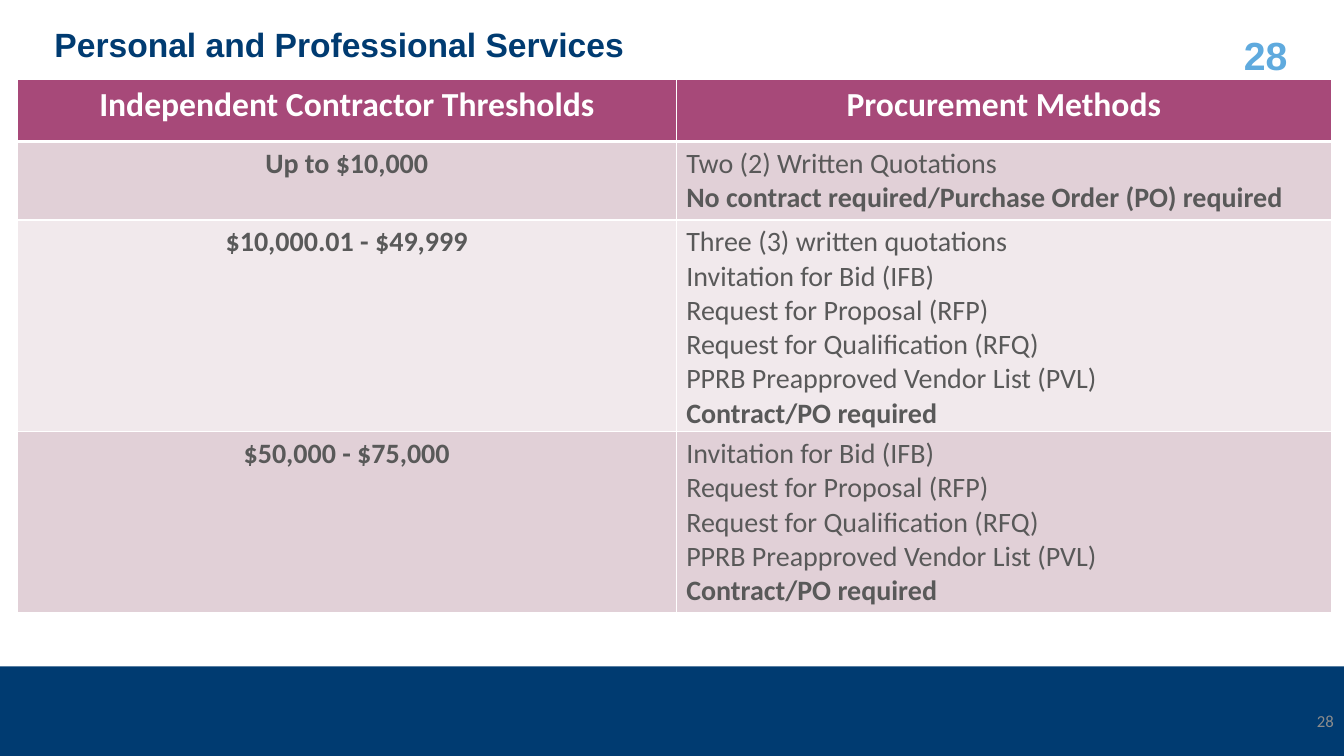
import pptx
import pptx.dml.color
import pptx.enum.shapes
import pptx.enum.text
import pptx.oxml
import pptx.oxml.ns
import pptx.util

Pt = pptx.util.Pt
ALIGN = pptx.enum.text.PP_ALIGN
MIDDLE = pptx.enum.text.MSO_ANCHOR.MIDDLE

COLORS = {
    "navy": "003B71",
    "sky": "5FAADE",
    "gray": "8C8C8C",
    "text": "595959",
    "header": "A74979",
    "band_dark": "E1D0D7",
    "band_light": "F1E9EC",
    "white": "FFFFFF",
}
HEADERS = ["Independent Contractor Thresholds", "Procurement Methods"]
FORMAL_METHODS = [
    "Invitation for Bid (IFB)",
    "Request for Proposal (RFP)",
    "Request for Qualification (RFQ)",
    "PPRB Preapproved Vendor List (PVL)",
    "Contract/PO required",
]
THRESHOLDS = [
    ("Up to $10,000", [
        "Two (2) Written Quotations",
        "No contract required/Purchase Order (PO) required",
    ]),
    ("$10,000.01 - $49,999", ["Three (3) written quotations"] + FORMAL_METHODS),
    ("$50,000 - $75,000", FORMAL_METHODS),
]
COLUMN_WIDTHS = [470.5, 468]
ROW_HEIGHTS = [44, 56.2, 154 - 15, 129]


def rgb(name):
    """Return the named colour."""
    return pptx.dml.color.RGBColor.from_string(COLORS[name])


def format_paragraph(paragraph, font, size, color, bold, align):
    """Set the alignment of a paragraph and the font of its runs."""
    paragraph.alignment = align
    for run in paragraph.runs:
        run.font.name = font
        run.font.size = Pt(size)
        run.font.bold = bold
        run.font.color.rgb = rgb(color)


def set_title(slide, text):
    """Place and format the title placeholder."""
    title = slide.shapes.title
    title.left, title.top, title.width, title.height = Pt(31.7), Pt(19), Pt(883), Pt(29)
    title.text_frame.text = text
    title.text_frame.vertical_anchor = MIDDLE
    paragraph = title.text_frame.paragraphs[0]
    paragraph.line_spacing = 0.9
    format_paragraph(paragraph, "Arial", 24, "navy", True, ALIGN.LEFT)


def add_footer_band(slide):
    """Draw the band along the bottom edge."""
    band = slide.shapes.add_shape(
        pptx.enum.shapes.MSO_SHAPE.RECTANGLE, Pt(0), Pt(476), Pt(960), Pt(64))
    band.shadow.inherit = False
    band.fill.solid()
    band.fill.fore_color.rgb = rgb("navy")
    band.line.fill.background()


def add_page_number(slide, left, top, width, height, font, size, color, bold):
    """Add a right-aligned page number."""
    box = slide.shapes.add_textbox(Pt(left), Pt(top), Pt(width), Pt(height))
    frame = box.text_frame
    frame.word_wrap = True
    frame.vertical_anchor = MIDDLE
    frame.text = "28"
    format_paragraph(frame.paragraphs[0], font, size, color, bold, ALIGN.RIGHT)


def set_borders(cell, top, bottom):
    """Give a cell white borders of the given top and bottom widths."""
    properties = cell._tc.get_or_add_tcPr()
    for side, width in zip("LRTB", (1, 1, top, bottom)):
        properties.append(pptx.oxml.parse_xml(
            f'<a:ln{side} {pptx.oxml.ns.nsdecls("a")} w="{Pt(width)}"><a:solidFill>'
            f'<a:srgbClr val="{COLORS["white"]}"/></a:solidFill></a:ln{side}>'))


def fill_cell(cell, lines, fill, size, color, align, top=1, bottom=1):
    """Write lines into a cell, with the last one bold."""
    set_borders(cell, top, bottom)
    cell.fill.solid()
    cell.fill.fore_color.rgb = rgb(fill)
    cell.text_frame.text = "\n".join(lines)
    for number, paragraph in enumerate(cell.text_frame.paragraphs, 1):
        format_paragraph(paragraph, "Calibri", size, color, number == len(lines), align)


def add_thresholds_table(slide):
    """Add the table of thresholds and procurement methods."""
    table = slide.shapes.add_table(
        len(ROW_HEIGHTS), len(COLUMN_WIDTHS), Pt(12.5), Pt(57),
        Pt(sum(COLUMN_WIDTHS)), Pt(sum(ROW_HEIGHTS))).table
    for column, width in zip(table.columns, COLUMN_WIDTHS):
        column.width = Pt(width)
    for row, height in zip(table.rows, ROW_HEIGHTS):
        row.height = Pt(height)
    for index, header in enumerate(HEADERS):
        fill_cell(table.cell(0, index), [header], "header", 24, "white",
                  ALIGN.CENTER, bottom=3)
    for index, (threshold, methods) in enumerate(THRESHOLDS, 1):
        fill = "band_dark" if index % 2 else "band_light"
        top = 3 if index == 1 else 1
        fill_cell(table.cell(index, 0), [threshold], fill, 20, "text", ALIGN.CENTER, top)
        fill_cell(table.cell(index, 1), methods, fill, 20, "text", ALIGN.LEFT, top)


def main():
    """Build and save the slide."""
    presentation = pptx.Presentation()
    presentation.slide_width = Pt(960)
    presentation.slide_height = Pt(540)
    slide = presentation.slides.add_slide(presentation.slide_layouts[5])
    add_footer_band(slide)
    add_page_number(slide, 869, 23.8, 57.6, 30.2, "Arial", 28, "sky", True)
    set_title(slide, "Personal and Professional Services")
    add_page_number(slide, 743.8, 500.4, 216, 28.8, "Calibri", 12, "gray", False)
    add_thresholds_table(slide)
    presentation.save("out.pptx")


if __name__ == "__main__":
    main()
